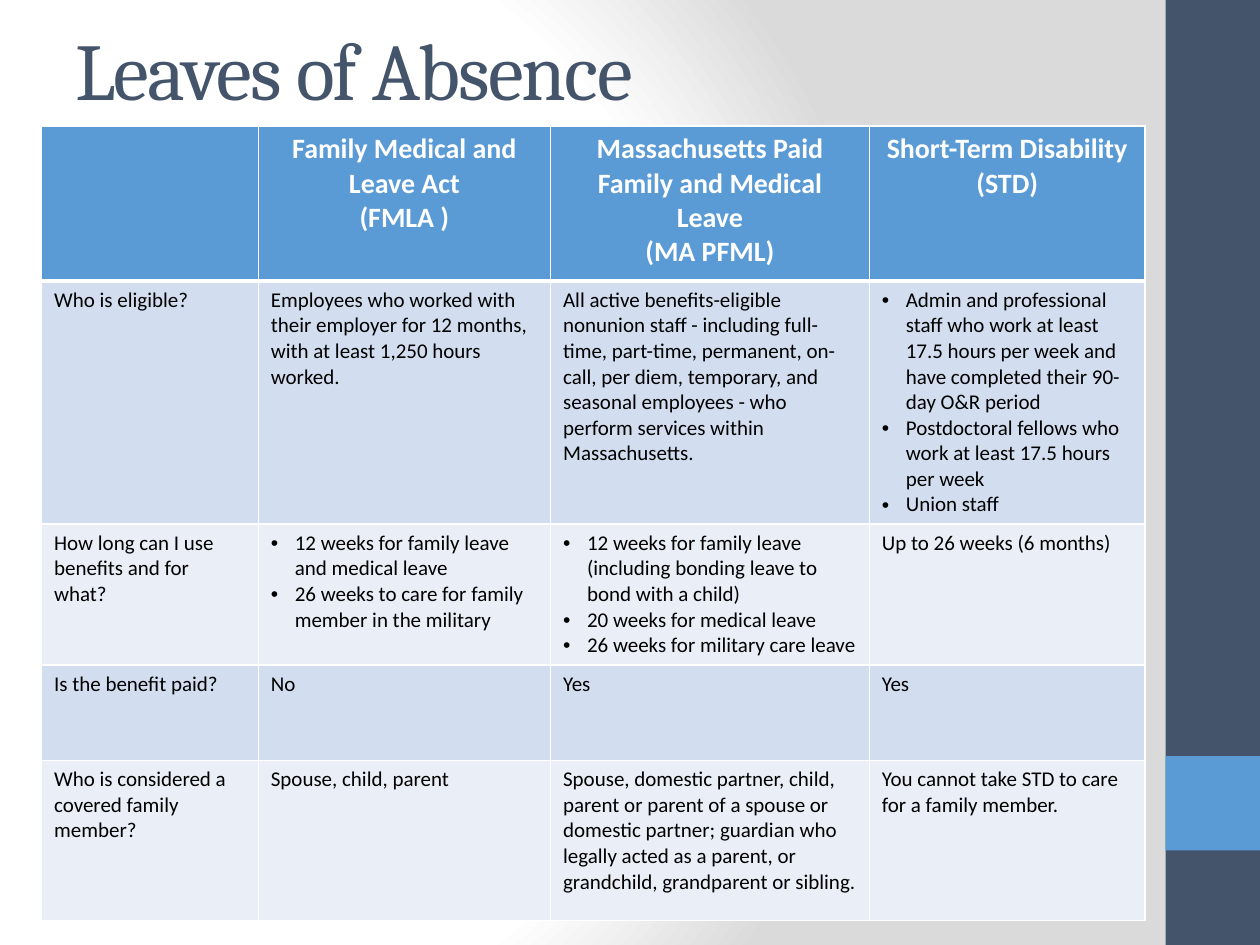
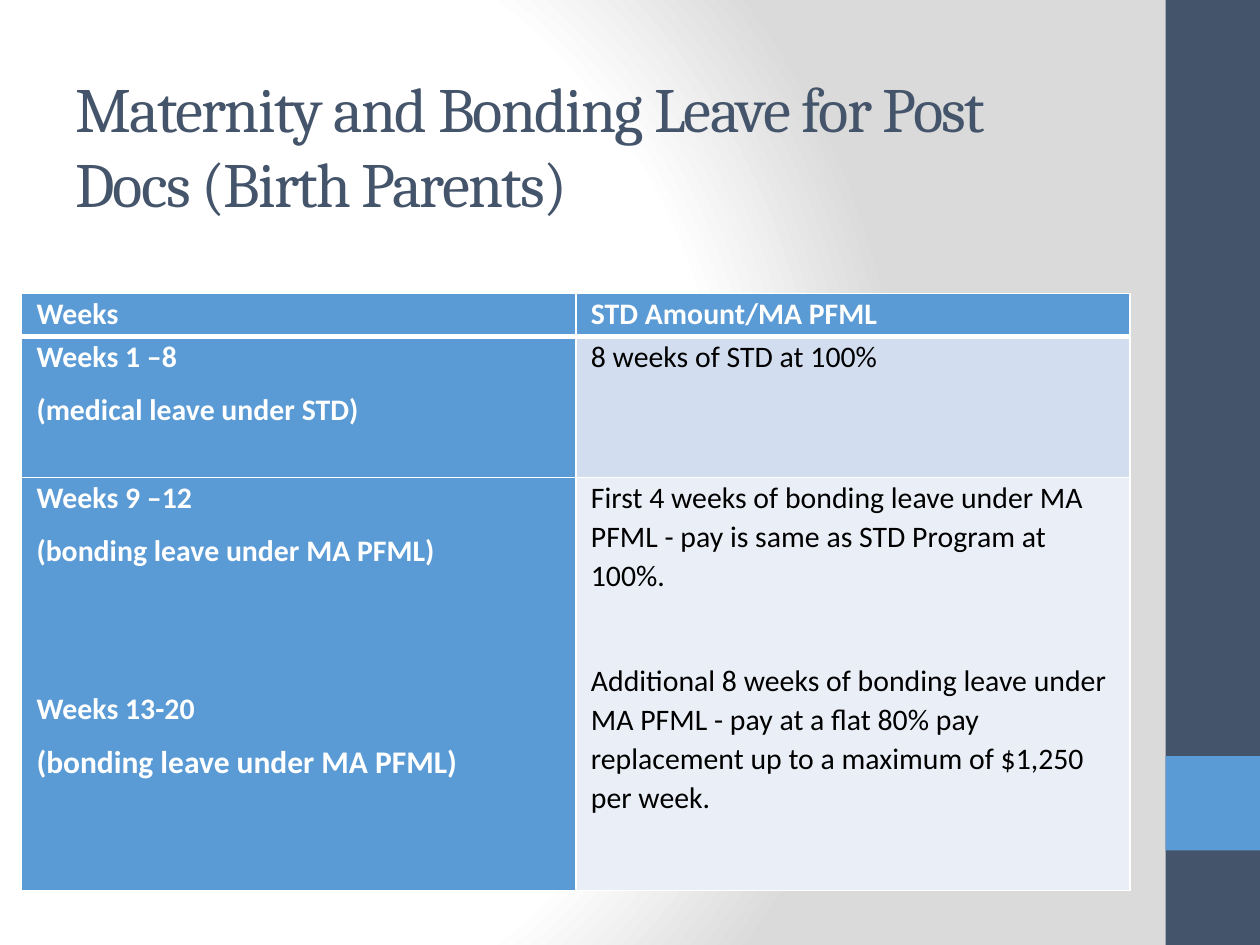
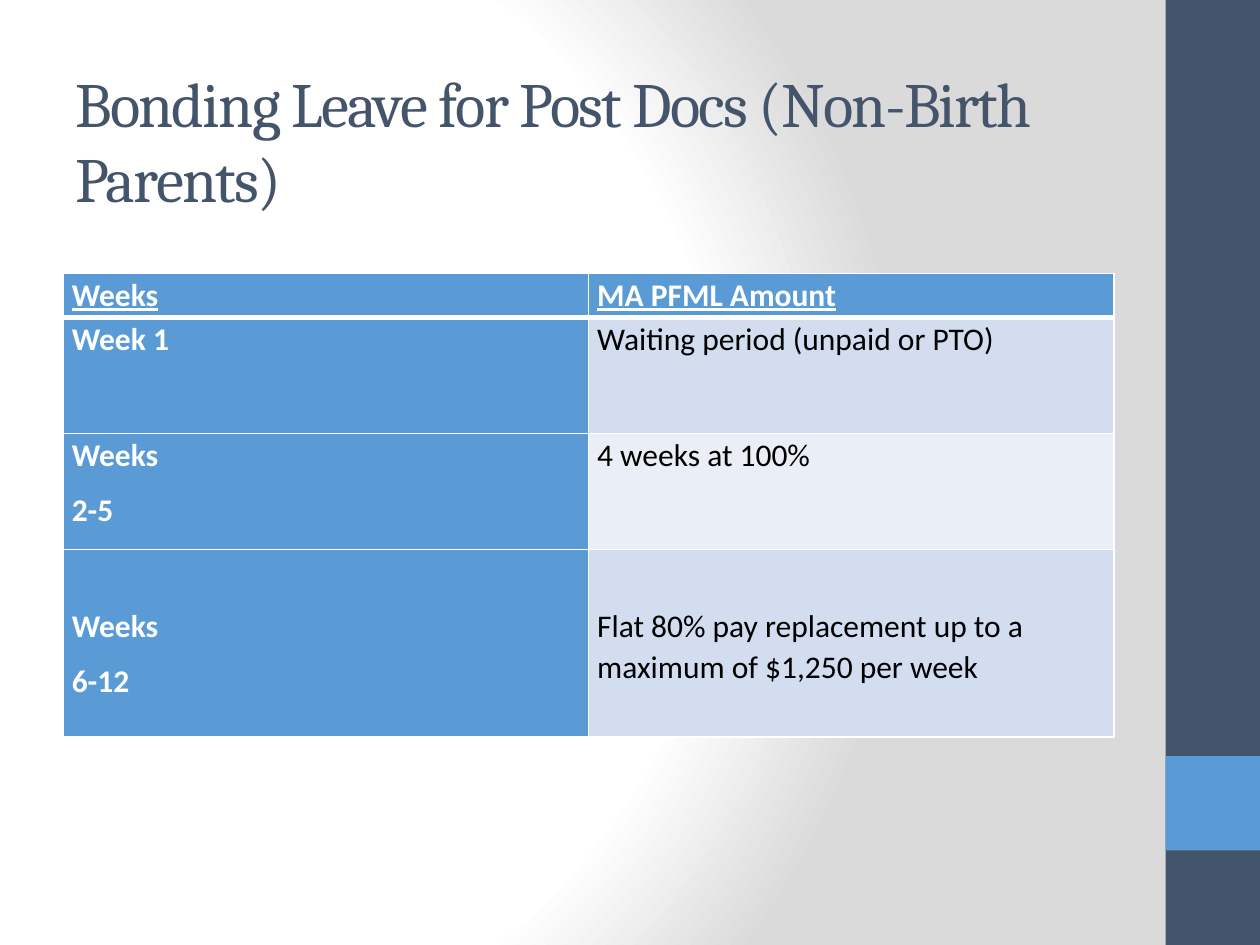
from dataclasses import dataclass

from pptx import Presentation
from pptx.dml.color import RGBColor
from pptx.enum.shapes import MSO_SHAPE as Preset
from pptx.enum.text import MSO_ANCHOR as Anchor, MSO_AUTO_SIZE as AutoSize, PP_ALIGN as Align
from pptx.oxml import parse_xml
from pptx.oxml.ns import nsdecls
from pptx.util import Emu, Pt

PX = 9144  # EMU per px, 100 px to the inch
WIDTH, HEIGHT = 1000, 750

WHITE = RGBColor(0xFF, 0xFF, 0xFF)
BLACK = RGBColor(0x00, 0x00, 0x00)
GREY = RGBColor(0xDA, 0xDA, 0xDA)
NAVY = RGBColor(0x44, 0x54, 0x6A)
BLUE = RGBColor(0x5B, 0x9B, 0xD5)
ROW_TINTS = (RGBColor(0xEA, 0xEF, 0xF7), RGBColor(0xD2, 0xDE, 0xEF))

TITLE_FONT, BODY_FONT = "Cambria", "Calibri"
BULLET_INDENT = 19
THIN, THICK = 1, 3


@dataclass(frozen=True)
class Band:
    top: int
    height: int
    color: RGBColor


@dataclass(frozen=True)
class Para:
    text: str
    bulleted: bool = False
    gap_before: float = 0
    size: int | None = None


@dataclass(frozen=True)
class Row:
    height: int
    cells: tuple[list[Para], ...]
    extra_top: int = 0


@dataclass(frozen=True)
class LeaveTable:
    left: int
    top: int
    columns: tuple[int, ...]
    rows: tuple[Row, ...]
    header_size: int
    body_size: int
    side_margin: int
    top_margin: int = 0
    header_align: Align = Align.LEFT
    header_underlined: bool = False
    heading_column: bool = True
    line_spacing: float = 1.07
    space_after: int = 8


@dataclass(frozen=True)
class LeaveSlide:
    title: str
    title_top: int
    title_height: int
    title_size: int
    table: LeaveTable


SIDE_BANDS = (Band(0, HEIGHT, NAVY), Band(600, 75, BLUE))


def px(length: int) -> Emu:
    return Emu(length * PX)


def lines(*texts: str) -> list[Para]:
    return [Para(text) for text in texts]


def bullets(*texts: str) -> list[Para]:
    return [Para(text, bulleted=True) for text in texts]


OVERVIEW = LeaveTable(
    left=33, top=100, columns=(172, 232, 253, 219),
    header_size=16, body_size=12, side_margin=10, top_margin=5,
    header_align=Align.CENTER, heading_column=False, line_spacing=1.0, space_after=0,
    rows=(
        Row(123, (
            [],
            lines("Family Medical and Leave Act", "(FMLA )"),
            lines("Massachusetts Paid Family and Medical Leave", "(MA PFML)"),
            lines("Short-Term Disability", "(STD)"),
        )),
        Row(193, (
            lines("Who is eligible?"),
            lines("Employees who worked with their employer for 12 months, "
                  "with at least 1,250 hours worked."),
            lines("All active benefits-eligible nonunion staff - including full-time, "
                  "part-time, permanent, on-call, per diem, temporary, and seasonal "
                  "employees - who perform services within Massachusetts."),
            bullets("Admin and professional staff who work at least 17.5 hours per week "
                    "and have completed their 90-day O&R period",
                    "Postdoctoral fellows who work at least 17.5 hours per week",
                    "Union staff"),
        )),
        Row(111, (
            lines("How long can I use", "benefits and for what?"),
            bullets("12 weeks for family leave and medical leave",
                    "26 weeks to care for family member in the military"),
            bullets("12 weeks for family leave (including bonding leave to bond with a child)",
                    "20 weeks for medical leave",
                    "26 weeks for military care leave"),
            lines("Up to 26 weeks (6 months)"),
        )),
        Row(76, (lines("Is the benefit paid?"), lines("No"), lines("Yes"), lines("Yes"))),
        Row(127, (
            lines("Who is considered a", "covered family", "member?"),
            lines("Spouse, child, parent"),
            lines("Spouse, domestic partner, child, parent or parent of a spouse or domestic "
                  "partner; guardian who legally acted as a parent, or grandchild, "
                  "grandparent or sibling."),
            lines("You cannot take STD to care for a family member."),
        )),
    ),
)

BIRTH_PARENTS = LeaveTable(
    left=17, top=233, columns=(440, 440),
    header_size=17, body_size=17, side_margin=12,
    rows=(
        Row(34, (lines("Weeks"), lines("STD Amount/MA PFML"))),
        Row(112, (
            lines("Weeks 1 –8", "(medical leave under STD)"),
            lines("8 weeks of STD at 100%"),
        )),
        Row(328, (
            [Para("Weeks 9 –12"),
             Para("(bonding leave under MA PFML)"),
             Para("Weeks 13-20", gap_before=60),
             Para("(bonding leave under MA PFML)", size=18)],
            [Para("First 4 weeks of bonding leave under MA PFML - pay is same as "
                  "STD Program at 100%."),
             Para("Additional 8 weeks of bonding leave under MA PFML - pay at a flat 80% "
                  "pay replacement up to a maximum of $1,250 per week.", gap_before=30)],
        )),
    ),
)

NON_BIRTH_PARENTS = LeaveTable(
    left=50, top=217, columns=(417, 417),
    header_size=18, body_size=18, side_margin=7, header_underlined=True,
    rows=(
        Row(35, (lines("Weeks"), lines("MA PFML Amount"))),
        Row(92, (lines("Week 1"), lines("Waiting period (unpaid or PTO)"))),
        Row(92, (lines("Weeks", "2-5"), lines("4 weeks at 100%"))),
        Row(149, (
            lines("Weeks", "6-12"),
            lines("Flat 80% pay replacement up to a maximum of $1,250 per week"),
        ), extra_top=44),
    ),
)

LEAVE_SLIDES = (
    LeaveSlide("Leaves of Absence", 25, 58, 46, OVERVIEW),
    LeaveSlide("Maternity and Bonding Leave for Post Docs (Birth Parents)",
               30, 170, 36, BIRTH_PARENTS),
    LeaveSlide("Bonding Leave for Post Docs (Non-Birth Parents)",
               30, 162, 36, NON_BIRTH_PARENTS),
)


def paint_background(slide) -> None:
    """Fill the slide with a circular gradient from white to grey."""
    stops = "".join(
        f'<a:gs pos="{percent * 1000}"><a:srgbClr val="{color}"/></a:gs>'
        for percent, color in ((0, WHITE), (75, WHITE), (100, GREY))
    )
    slide.element.cSld.insert(0, parse_xml(
        f'<p:bg {nsdecls("p", "a")}><p:bgPr><a:gradFill><a:gsLst>{stops}</a:gsLst>'
        '<a:path path="circle"><a:fillToRect l="20000" t="50000" r="100000" b="50000"/>'
        '</a:path></a:gradFill><a:effectLst/></p:bgPr></p:bg>'
    ))


def add_side_band(slide, band: Band) -> None:
    block = slide.shapes.add_shape(Preset.RECTANGLE, px(925), px(band.top),
                                   px(75), px(band.height))
    block.shadow.inherit = False
    block.fill.solid()
    block.fill.fore_color.rgb = band.color
    block.line.fill.background()


def style_run(run, font_name: str, size: int, color: RGBColor) -> None:
    run.font.name = font_name
    run.font.size = Pt(size)
    run.font.color.rgb = color


def add_title(slide, content: LeaveSlide) -> None:
    box = slide.shapes.add_textbox(px(50), px(content.title_top),
                                   px(833), px(content.title_height))
    frame = box.text_frame
    frame.word_wrap = True
    frame.auto_size = AutoSize.NONE
    frame.vertical_anchor = Anchor.MIDDLE
    frame.text = content.title
    run = frame.paragraphs[0].runs[0]
    style_run(run, TITLE_FONT, content.title_size, NAVY)
    run.font.bold = False
    run.font._element.set("spc", "-100")


def add_bullet(paragraph) -> None:
    properties = paragraph._p.get_or_add_pPr()
    properties.set("marL", str(px(BULLET_INDENT)))
    properties.set("indent", str(-px(BULLET_INDENT)))
    for tag in (f'<a:buFont {nsdecls("a")} typeface="Arial"/>',
                f'<a:buChar {nsdecls("a")} char="•"/>'):
        properties.append(parse_xml(tag))


def set_borders(cell, top: int, bottom: int) -> None:
    """Draw white cell edges, with the top and bottom widths in points."""
    properties = cell._tc.get_or_add_tcPr()
    widths = {"lnL": THIN, "lnR": THIN, "lnT": top, "lnB": bottom}
    for position, (edge, width) in enumerate(widths.items()):
        properties.insert(position, parse_xml(
            f'<a:{edge} {nsdecls("a")} w="{Pt(width)}"><a:solidFill>'
            f'<a:srgbClr val="{WHITE}"/></a:solidFill></a:{edge}>'
        ))


def fill_cell(cell, paras: list[Para], table: LeaveTable, row: int, column: int) -> None:
    is_header = row == 0
    is_heading = is_header or (table.heading_column and column == 0)
    cell.margin_left = cell.margin_right = px(table.side_margin)
    cell.margin_top = px(table.top_margin + table.rows[row].extra_top)
    cell.margin_bottom = px(table.top_margin)
    cell.fill.solid()
    cell.fill.fore_color.rgb = BLUE if is_heading else ROW_TINTS[row % 2]
    set_borders(cell, top=THICK if row == 1 else THIN, bottom=THICK if is_header else THIN)

    cell.text_frame.text = "\n".join(para.text for para in paras)
    for paragraph, para in zip(cell.text_frame.paragraphs, paras):
        paragraph.alignment = table.header_align if is_header else Align.LEFT
        paragraph.line_spacing = table.line_spacing
        paragraph.space_before = Pt(para.gap_before)
        paragraph.space_after = Pt(table.space_after)
        if para.bulleted:
            add_bullet(paragraph)
        size = para.size or (table.header_size if is_header else table.body_size)
        for run in paragraph.runs:
            style_run(run, BODY_FONT, size, WHITE if is_heading else BLACK)
            run.font.bold = is_heading
            run.font.underline = is_header and table.header_underlined


def add_leave_table(slide, table: LeaveTable) -> None:
    grid = slide.shapes.add_table(
        len(table.rows), len(table.columns), px(table.left), px(table.top),
        px(sum(table.columns)), px(sum(row.height for row in table.rows)),
    ).table
    for column, width in zip(grid.columns, table.columns):
        column.width = px(width)
    for r, row in enumerate(table.rows):
        grid.rows[r].height = px(row.height)
        for c, paras in enumerate(row.cells):
            fill_cell(grid.cell(r, c), paras, table, r, c)


def main() -> None:
    deck = Presentation()
    deck.slide_width, deck.slide_height = px(WIDTH), px(HEIGHT)
    blank = deck.slide_layouts[6]
    for content in LEAVE_SLIDES:
        slide = deck.slides.add_slide(blank)
        paint_background(slide)
        for band in SIDE_BANDS:
            add_side_band(slide, band)
        add_title(slide, content)
        add_leave_table(slide, content.table)
    deck.save("out.pptx")


if __name__ == "__main__":
    main()
